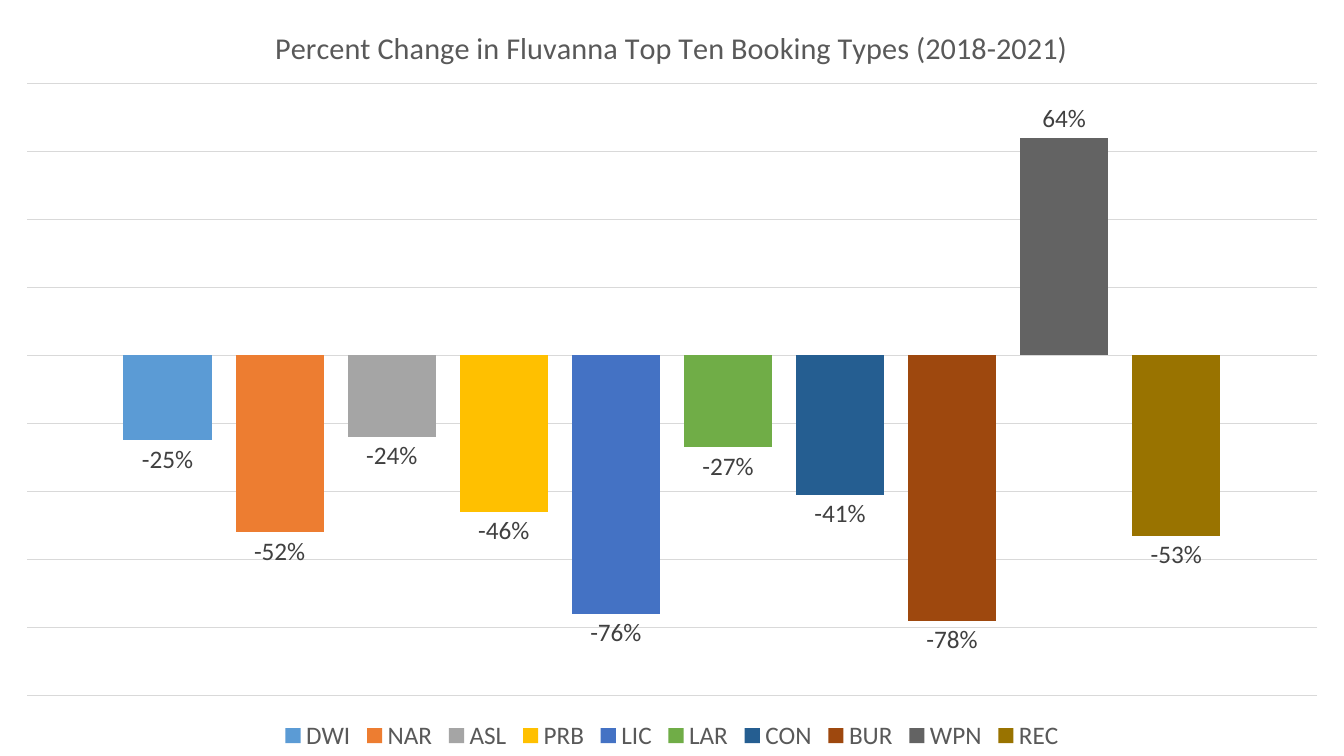
from dataclasses import dataclass

from lxml.etree import SubElement
from pptx import Presentation
from pptx.chart.chart import Chart
from pptx.chart.data import CategoryChartData
from pptx.chart.series import BarSeries
from pptx.dml.color import RGBColor
from pptx.enum.chart import XL_CHART_TYPE as ChartType
from pptx.enum.chart import XL_LABEL_POSITION as LabelPos
from pptx.enum.chart import XL_LEGEND_POSITION as LegendPos
from pptx.oxml.ns import qn
from pptx.text.text import Font
from pptx.util import Pt


@dataclass(frozen=True)
class Theme:
    font: str = "Calibri"
    title_size: float = 21.6
    text_size: float = 18
    text: str = "595959"
    label: str = "404040"
    grid: str = "D9D9D9"
    percent: str = "0%"


@dataclass(frozen=True)
class Booking:
    code: str
    change: float
    color: str


THEME = Theme()
WIDTH, HEIGHT = Pt(960), Pt(540)
TITLE = "Percent Change in Fluvanna Top Ten Booking Types (2018-2021)"
PLOT_AREA = {"x": 0.02, "y": 0.11, "w": 0.96, "h": 0.81}
BOOKINGS = [
    Booking("DWI", -0.25, "5B9BD5"),
    Booking("NAR", -0.52, "ED7D31"),
    Booking("ASL", -0.24, "A5A5A5"),
    Booking("PRB", -0.46, "FFC000"),
    Booking("LIC", -0.76, "4472C4"),
    Booking("LAR", -0.27, "70AD47"),
    Booking("CON", -0.41, "255E91"),
    Booking("BUR", -0.78, "9E480E"),
    Booking("WPN", 0.64, "636363"),
    Booking("REC", -0.53, "997300"),
]


def set_font(font: Font, size: float, color: str) -> None:
    font.name = THEME.font
    font.size = Pt(size)
    font.bold = False
    font.color.rgb = RGBColor.from_string(color)


def set_plot_layout(chart: Chart) -> None:
    area = chart.element.find(f".//{qn('c:plotArea')}")
    for old in area.findall(qn("c:layout")):
        area.remove(old)
    layout = SubElement(area, qn("c:layout"))
    area.insert(0, layout)
    manual = SubElement(layout, qn("c:manualLayout"))
    settings = {"layoutTarget": "inner", "xMode": "edge", "yMode": "edge", **PLOT_AREA}
    for tag, value in settings.items():
        SubElement(manual, qn(f"c:{tag}")).set("val", str(value))


def format_title(chart: Chart) -> None:
    chart.has_title = True
    p = chart.chart_title.text_frame.paragraphs[0]
    p.text = TITLE
    set_font(p.font, THEME.title_size, THEME.text)


def format_axes(chart: Chart) -> None:
    chart.category_axis.visible = False
    axis = chart.value_axis
    axis.visible = False
    axis.minimum_scale, axis.maximum_scale, axis.major_unit = -1, 0.8, 0.2
    axis.tick_labels.number_format = THEME.percent
    axis.tick_labels.number_format_is_linked = False
    axis.has_major_gridlines = True
    line = axis.major_gridlines.format.line
    line.width = Pt(0.75)
    line.color.rgb = RGBColor.from_string(THEME.grid)


def format_legend(chart: Chart) -> None:
    chart.has_legend = True
    chart.legend.position = LegendPos.BOTTOM
    chart.legend.include_in_layout = False
    set_font(chart.legend.font, THEME.text_size, THEME.text)


def format_series(series: BarSeries, booking: Booking) -> None:
    series.invert_if_negative = False
    series.format.fill.solid()
    series.format.fill.fore_color.rgb = RGBColor.from_string(booking.color)
    labels = series.data_labels
    labels.show_value = True
    labels.position = LabelPos.OUTSIDE_END
    labels.number_format = THEME.percent
    labels.number_format_is_linked = False
    set_font(labels.font, THEME.text_size, THEME.label)


def main() -> None:
    prs = Presentation()
    prs.slide_width, prs.slide_height = WIDTH, HEIGHT
    slide = prs.slides.add_slide(prs.slide_layouts.get_by_name("Blank"))

    data = CategoryChartData(number_format=THEME.percent)
    data.categories = ["1"]
    for booking in BOOKINGS:
        data.add_series(booking.code, [booking.change])
    chart = slide.shapes.add_chart(
        ChartType.COLUMN_CLUSTERED, 0, 0, WIDTH, HEIGHT, data
    ).chart
    set_font(chart.font, THEME.text_size, THEME.text)

    plot = chart.plots[0]
    plot.gap_width, plot.overlap = 219, -27
    plot.vary_by_categories = False
    for series, booking in zip(plot.series, BOOKINGS):
        format_series(series, booking)

    format_title(chart)
    format_axes(chart)
    format_legend(chart)
    set_plot_layout(chart)
    prs.save("out.pptx")


if __name__ == "__main__":
    main()
